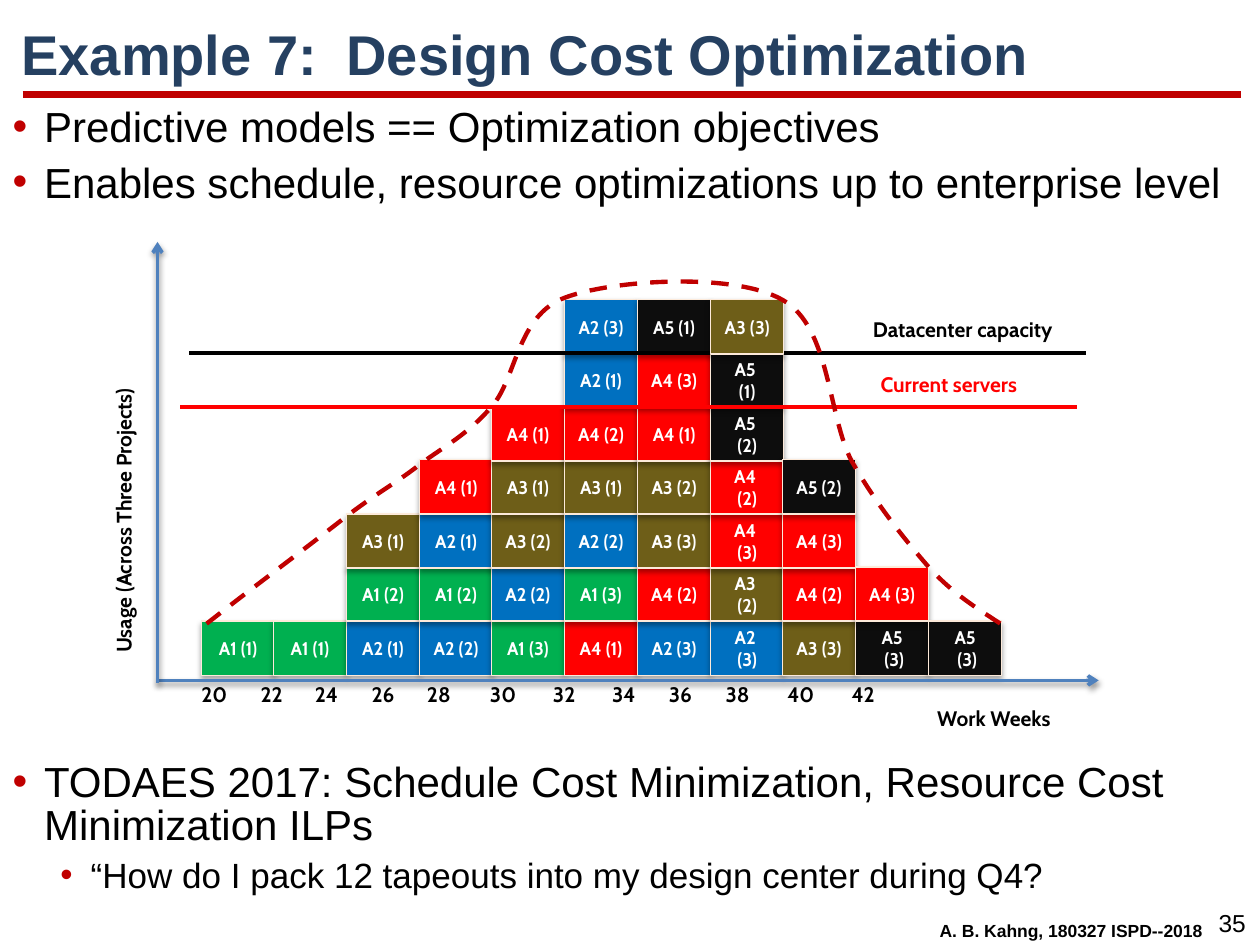
from dataclasses import dataclass

from lxml.etree import SubElement
from pptx import Presentation
from pptx.dml.color import RGBColor
from pptx.enum.dml import MSO_LINE
from pptx.enum.shapes import MSO_CONNECTOR, MSO_SHAPE
from pptx.enum.text import MSO_ANCHOR, MSO_AUTO_SIZE, PP_ALIGN
from pptx.oxml.ns import qn
from pptx.util import Pt

PX = 9144
LEFT, MID = PP_ALIGN.LEFT, PP_ALIGN.CENTER
CENTER = MSO_ANCHOR.MIDDLE
GROW, FIXED = MSO_AUTO_SIZE.SHAPE_TO_FIT_TEXT, MSO_AUTO_SIZE.NONE
RECT, LINE, DASH = MSO_SHAPE.RECTANGLE, MSO_CONNECTOR.STRAIGHT, MSO_LINE.DASH


@dataclass(frozen=True)
class Theme:
    """Colours, faces and type sizes of the slide."""
    black: str = "000000"
    white: str = "FFFFFF"
    navy: str = "254061"
    rust: str = "C00000"
    red: str = "FF0000"
    axis: str = "4F81BD"
    edge: str = "FDEADA"
    sans: str = "Arial"
    face: str = "Cabin"
    title: float = 32
    body: float = 24
    sub: float = 20
    page: float = 14
    label: float = 12
    cell: float = 10.5
    foot: float = 10


T = Theme()
FILLS = {"A1": "00B050", "A2": "0070C0", "A3": "6E5E18", "A4": T.red, "A5": "0D0D0D"}
STACKS = [
    ["A1 (1)"],
    ["A1 (1)"],
    ["A2 (1)", "A1 (2)", "A3 (1)"],
    ["A2 (2)", "A1 (2)", "A2 (1)", "A4 (1)"],
    ["A1 (3)", "A2 (2)", "A3 (2)", "A3 (1)", "A4 (1)"],
    ["A4 (1)", "A1 (3)", "A2 (2)", "A3 (1)", "A4 (2)", "A2 (1)", "A2 (3)"],
    ["A2 (3)", "A4 (2)", "A3 (3)", "A3 (2)", "A4 (1)", "A4 (3)", "A5 (1)"],
    ["A2 \n(3)", "A3 \n(2)", "A4 \n(3)", "A4 \n(2)", "A5 \n(2)", "A5 \n(1)"],
    ["A3 (3)", "A4 (2)", "A4 (3)", "A5 (2)"],
    ["A5\n (3)", "A4 (3)"],
    ["A5\n (3)"],
]
COLS, ROWS = 11, 7
WEEKS = range(20, 44, 2)
STOPS = [47, 90, 135, 179, 229, 279, 326, 371, 416, 465, 516]
CURVE = [
    (164, 495), (201, 466), (239, 438), (276, 409), (304, 388), (315, 383), (334, 368),
    (353, 354), (371, 345), (390, 323), (410, 301), (410, 250), (449, 236),
    (487, 222), (583, 216), (621, 238), (659, 259), (657, 330), (676, 366),
    (696, 401), (718, 428), (737, 450), (757, 472), (776, 483), (794, 495),
]


def scale(*vals):
    """Turn px into EMU."""
    return [v * PX for v in vals]


def put(item, **vals):
    """Set attributes of an object from format values."""
    for name, val in vals.items():
        setattr(item, name, val)


def ink(para, size, hue, face, bold=False):
    """Format the font of a paragraph."""
    put(para.font, size=Pt(size), name=face, bold=bold)
    para.font.color.rgb = RGBColor.from_string(hue)


def tabs(para, stops):
    """Add left tab stops to a paragraph."""
    tray = SubElement(para._p.get_or_add_pPr(), qn("a:tabLst"))
    for stop in stops:
        SubElement(tray, qn("a:tab"), pos=str(stop * PX), algn="l")


def shade(shape, alpha=0):
    """Give a shape a soft drop shadow, or none."""
    tray = SubElement(shape.element.spPr, qn("a:effectLst"))
    if alpha:
        cast = SubElement(tray, qn("a:outerShdw"), blurRad="39370", dist="22860",
                          dir="5400000", rotWithShape="0")
        hue = SubElement(cast, qn("a:srgbClr"), val=T.black)
        SubElement(hue, qn("a:alpha"), val=str(alpha * 1000))


def rule(page, ends, hue, width, arrow=False):
    """Draw a straight line, with an arrowhead and shadow for an axis."""
    line = page.shapes.add_connector(LINE, *scale(*ends))
    line.line.color.rgb = RGBColor.from_string(hue)
    line.line.width = Pt(width)
    if arrow:
        SubElement(line.element.find(".//" + qn("a:ln")), qn("a:tailEnd"), type="arrow")
    shade(line, 38 if arrow else 0)


def label(page, box, text, size=T.label, hue=T.black, face=T.face, bold=True,
          wrap=True, align=LEFT, stops=(), turn=False):
    """Place a text label in a box."""
    shape = page.shapes.add_textbox(*scale(*box))
    frame = shape.text_frame
    put(frame, word_wrap=wrap, auto_size=GROW, text=text)
    if turn:
        shape.element.find(".//" + qn("a:bodyPr")).set("vert", "vert270")
    para = frame.paragraphs[0]
    if stops:
        tabs(para, stops)
    para.alignment = align
    ink(para, size, hue, face, bold)


def cell(page, box, col, row, text):
    """Draw one block of the stacked plot."""
    left, top, wide, high = box
    spot = (left + wide * col // COLS, top + high * (ROWS - 1 - row) // ROWS, 58, 43)
    shape = page.shapes.add_shape(RECT, *scale(*spot))
    shape.fill.solid()
    shape.fill.fore_color.rgb = RGBColor.from_string(FILLS[text[:2]])
    shape.line.color.rgb = RGBColor.from_string(T.edge)
    shape.line.width = Pt(0.75)
    shade(shape, 35)
    put(shape.text_frame, text=text, word_wrap=True, vertical_anchor=CENTER,
        margin_left=0, margin_right=0)
    for para in shape.text_frame.paragraphs:
        para.alignment = MID
        ink(para, T.cell, T.white, T.face, True)


def hull(page):
    """Draw the dashed usage curve."""
    pen = page.shapes.build_freeform(*CURVE[0], scale=PX)
    pen.add_line_segments(CURVE[1:], close=False)
    shape = pen.convert_to_shape()
    route = shape.element.find(".//" + qn("a:path"))
    steps = route.findall(qn("a:lnTo"))
    for start in range(0, len(steps), 3):
        bend = SubElement(route, qn("a:cubicBezTo"))
        for step in steps[start:start + 3]:
            bend.append(step[0])
            route.remove(step)
    shape.fill.background()
    shape.line.color.rgb = RGBColor.from_string(T.rust)
    put(shape.line, width=Pt(2.5), dash_style=DASH)
    shade(shape)


def plot(page, box):
    """Draw the stacked usage plot with its axes and limits."""
    left, top, wide, high = box
    grid = (left + 77, top + 46, 635, 298)
    for col, stack in enumerate(STACKS):
        for row, text in enumerate(stack):
            cell(page, grid, col, row, text)
    base = top + high
    rule(page, (left + 42, base - 2, left + 789, base - 2), T.axis, 2, True)
    rule(page, (left + 42, base, left + 42, top), T.axis, 2, True)
    label(page, (left + 67, base - 6, 719, 30), "\t".join(map(str, WEEKS)), stops=STOPS)
    rule(page, (left + 60, top + 131, left + 772, top + 131), T.red, 2.25)
    rule(page, (left + 67, top + 88, left + 779, top + 88), T.black, 2.25)
    label(page, (left + 606, top + 98, 151, 30), "Current servers", hue=T.red, wrap=False)
    label(page, (left + 651, base + 13, 140, 30), "Work Weeks")
    label(page, (left, top, 40, 336), "Usage (Across Three Projects)", turn=True)
    label(page, (left + 600, top + 54, 208, 30), "Datacenter capacity")
    cell(page, grid, 7, 6, "A3 (3)")
    hull(page)


def move(shape, box):
    """Move a placeholder to a box."""
    put(shape, **dict(zip(("left", "top", "width", "height"), scale(*box))))


def head(page, box):
    """Fill the title and draw the bar below it."""
    shape = page.shapes.title
    move(shape, box)
    put(shape.text_frame, text="Example 7:\tDesign Cost Optimization",
        vertical_anchor=CENTER, auto_size=FIXED, word_wrap=True)
    para = shape.text_frame.paragraphs[0]
    tabs(para, [258])
    put(para, alignment=LEFT, line_spacing=0.9)
    ink(para, T.title, T.navy, T.sans, True)
    left, top, wide, high = box
    rule(page, (left + 11, top + high - 3, left + wide + 10, top + high - 3), T.rust, 4.5)


def points(shape, box, items):
    """Fill a body placeholder with bulleted items of text and level."""
    move(shape, box)
    frame = shape.text_frame
    put(frame, text="\n".join(text for text, _ in items), auto_size=FIXED, word_wrap=True)
    for spot, (para, (_, level)) in enumerate(zip(frame.paragraphs, items)):
        size, edge, hang = ((T.body, 25, 25), (T.sub, 62, 24))[level]
        props = para._p.get_or_add_pPr()
        props.set("marL", str(edge * PX))
        props.set("indent", str(-hang * PX))
        SubElement(SubElement(props, qn("a:buClr")), qn("a:srgbClr"), val=T.rust)
        SubElement(props, qn("a:buFont"), typeface=T.sans)
        SubElement(props, qn("a:buChar"), char="•")
        put(para, level=level, line_spacing=0.85, space_before=Pt(size * 0.3 if spot else 0))
        ink(para, size, T.black, T.sans)


def main():
    """Build and save the slide."""
    deck = Presentation()
    put(deck, slide_width=1000 * PX, slide_height=750 * PX)
    page = deck.slides.add_slide(deck.slide_layouts[3])
    head(page, (7, 13, 968, 65))
    points(page.placeholders[1], (0, 81, 1000, 107), [
        ("Predictive models == Optimization objectives", 0),
        ("Enables schedule, resource optimizations up to enterprise level", 0)])
    plot(page, (83, 192, 808, 350))
    points(page.placeholders[2], (0, 601, 1000, 107), [
        ("TODAES 2017: Schedule Cost Minimization, Resource Cost Minimization ILPs", 0),
        ("“How do I pack 12 tapeouts into my design center during Q4?", 1)])
    foot = dict(face=T.sans, wrap=False, align=MID)
    label(page, (956, 716, 44, 34), "35", T.page, bold=False, **foot)
    label(page, (735, 725, 230, 27), "A. B. Kahng, 180327 ISPD--2018", T.foot, **foot)
    deck.save("out.pptx")


if __name__ == "__main__":
    main()
